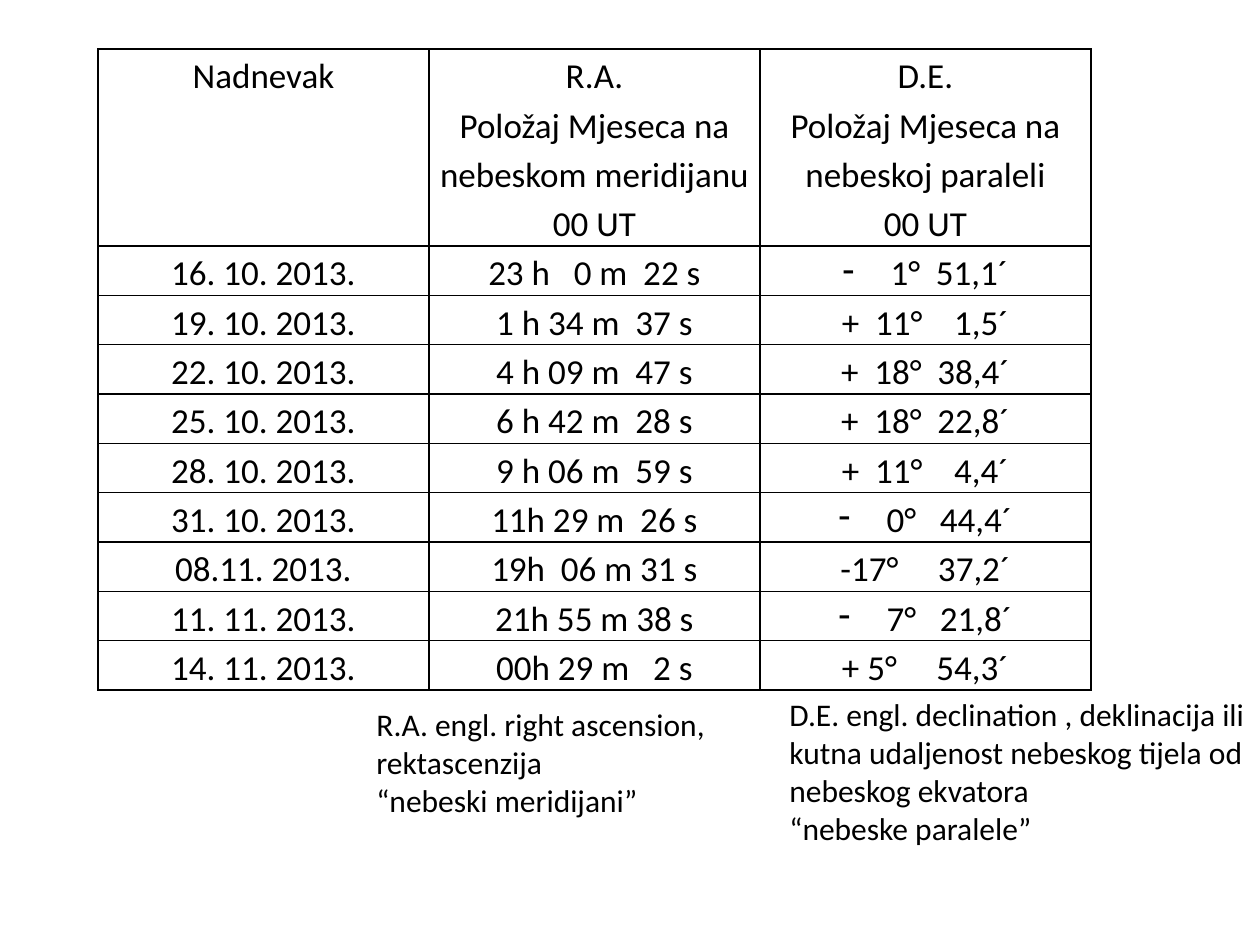
from dataclasses import dataclass

from lxml.etree import SubElement as Sub
from pptx import Presentation
from pptx.dml.color import RGBColor as Rgb
from pptx.enum.text import MSO_AUTO_SIZE as Fit, PP_ALIGN as Align
from pptx.oxml.ns import qn
from pptx.util import Emu, Pt

SCALE = 914400 / 126


@dataclass(frozen=True)
class Theme:
    font: str = "Calibri"
    ink: str = "000000"
    cell: int = 20
    note: int = 18
    line: int = 1
    lead: float = 1.15


THEME = Theme()

HEAD = (
    "Nadnevak",
    "R.A.\nPoložaj Mjeseca na nebeskom meridijanu\n00 UT",
    "D.E.\nPoložaj Mjeseca na nebeskoj paraleli\n00 UT",
)
# A leading "- " in a cell becomes a dash bullet.
ROWS = (
    ("16. 10. 2013.", "23 h   0 m  22 s", "- 1°  51,1´"),
    ("19. 10. 2013.", "1 h 34 m  37 s", "+  11°    1,5´"),
    ("22. 10. 2013.", "4 h 09 m  47 s", "+  18°  38,4´"),
    ("25. 10. 2013.", "6 h 42 m  28 s", "+  18°  22,8´"),
    ("28. 10. 2013.", "9 h 06 m  59 s", "+  11°    4,4´"),
    ("31. 10. 2013.", "11h 29 m  26 s", "- 0°   44,4´"),
    ("08.11. 2013.", "19h  06 m 31 s", "-17°     37,2´"),
    ("11. 11. 2013.", "21h 55 m 38 s", "- 7°   21,8´"),
    ("14. 11. 2013.", "00h 29 m   2 s", "+ 5°     54,3´"),
)
NOTES = (
    ((364, 699, 403, 127),
     "R.A. engl. right ascension, rektascenzija\n“nebeski meridijani”"),
    ((777, 689, 483, 165),
     "D.E. engl. declination , deklinacija ili kutna udaljenost "
     "nebeskog tijela od nebeskog ekvatora\n“nebeske paralele”"),
)


def px(n):
    return Emu(round(n * SCALE))


def style(frame, size):
    for para in frame.paragraphs:
        for run in para.runs:
            run.font.name = THEME.font
            run.font.size = Pt(size)
            run.font.color.rgb = Rgb.from_string(THEME.ink)


def border(cell):
    props = cell._tc.get_or_add_tcPr()
    for side in ("lnL", "lnR", "lnT", "lnB"):
        line = Sub(props, qn(f"a:{side}"), w=str(Pt(THEME.line)))
        Sub(Sub(line, qn("a:solidFill")), qn("a:srgbClr"), val=THEME.ink)


def dash(para):
    """Give the paragraph a dash bullet with a hanging indent."""
    props = para._p.get_or_add_pPr()
    props.set("marL", str(px(48)))
    props.set("indent", str(px(-48)))
    Sub(props, qn("a:buChar"), char="-")


def fill_cell(cell, text):
    border(cell)
    cell.fill.background()
    cell.margin_left = cell.margin_right = px(9)
    cell.margin_top = cell.margin_bottom = 0
    frame = cell.text_frame
    frame.text = text.removeprefix("- ")
    for para in frame.paragraphs:
        para.alignment = Align.CENTER
        para.line_spacing = THEME.lead
    if text.startswith("- "):
        dash(frame.paragraphs[0])
    style(frame, THEME.cell)


def add_grid(slide, left, top, wide, heights):
    data = (HEAD, *ROWS)
    table = slide.shapes.add_table(
        len(data), len(HEAD), px(left), px(top),
        px(wide * len(HEAD)), px(sum(heights))).table
    table.first_row = table.horz_banding = False
    for col in table.columns:
        col.width = px(wide)
    for row, high, texts in zip(table.rows, heights, data):
        row.height = px(high)
        for cell, text in zip(row.cells, texts):
            fill_cell(cell, text)


def add_note(slide, box, text):
    frame = slide.shapes.add_textbox(*map(px, box)).text_frame
    frame.word_wrap = True
    frame.auto_size = Fit.SHAPE_TO_FIT_TEXT
    frame.text = text
    style(frame, THEME.note)


def main():
    deck = Presentation()
    deck.slide_width, deck.slide_height = px(1260), px(945)
    slide = deck.slides.add_slide(deck.slide_layouts[6])
    add_grid(slide, 98, 49, 331, [188] + [47] * len(ROWS))
    for box, text in NOTES:
        add_note(slide, box, text)
    deck.save("out.pptx")


if __name__ == "__main__":
    main()
